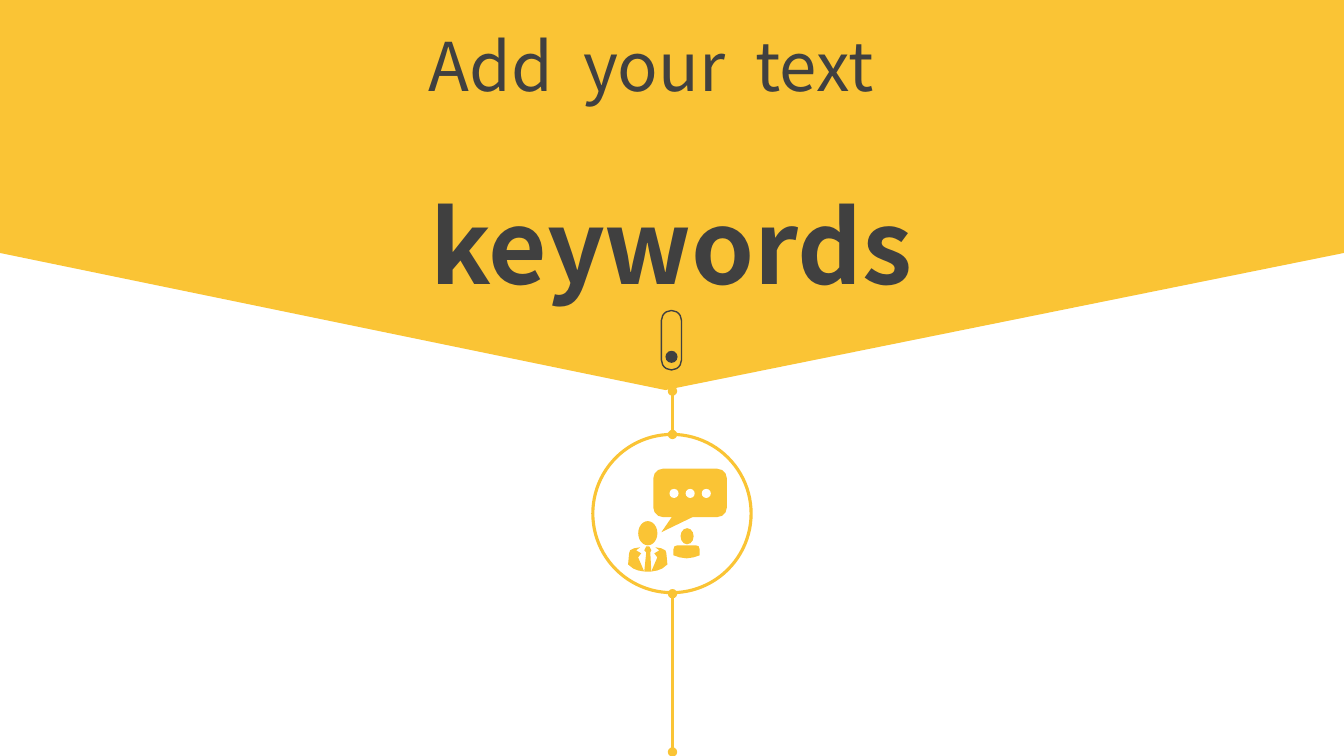
from dataclasses import dataclass

from lxml.etree import SubElement
from pptx import Presentation
from pptx.dml.color import RGBColor
from pptx.enum.shapes import MSO_CONNECTOR, MSO_SHAPE as Shape
from pptx.enum.text import MSO_ANCHOR, MSO_AUTO_SIZE, PP_ALIGN
from pptx.oxml.ns import qn
from pptx.util import Pt

PX = 9144
YELLOW, DARK, WHITE = "FAC435", "404040", "FFFFFF"
FONT = "Noto Sans CJK JP"
AXIS = 667
BODY_AXIS_DOUBLE = 1285


@dataclass
class Preset:
    kind: Shape
    x: int
    y: int
    w: int
    h: int
    fill: str | None = None
    line: str | None = None
    weight: float = 1
    radius: float | None = None


@dataclass
class Outline:
    points: list[tuple[int, int]]
    fill: str = YELLOW


def color(value: str) -> RGBColor:
    return RGBColor.from_string(value)


def paint(sp, fill: str | None, line: str | None = None, weight: float = 1) -> None:
    sp.shadow.inherit = False
    if fill:
        sp.fill.solid()
        sp.fill.fore_color.rgb = color(fill)
    else:
        sp.fill.background()
    if line:
        sp.line.color.rgb = color(line)
        sp.line.width = Pt(weight)
    else:
        sp.line.fill.background()


def draw_preset(s, item: Preset) -> None:
    box = (v * PX for v in (item.x, item.y, item.w, item.h))
    sp = s.shapes.add_shape(item.kind, *box)
    if item.radius is not None:
        sp.adjustments[0] = item.radius
    paint(sp, item.fill, item.line, item.weight)


def draw_outline(s, item: Outline) -> None:
    builder = s.shapes.build_freeform(*item.points[0], scale=PX)
    builder.add_line_segments(item.points[1:], close=True)
    paint(builder.convert_to_shape(), item.fill)


def draw_stem(s, top: int, bottom: int) -> None:
    c = s.shapes.add_connector(
        MSO_CONNECTOR.STRAIGHT, AXIS * PX, top * PX, AXIS * PX, bottom * PX)
    c.line.color.rgb = color(YELLOW)
    c.line.width = Pt(2.25)
    ln = c.line._get_or_add_ln()
    for end in ("a:headEnd", "a:tailEnd"):
        SubElement(ln, qn(end), type="oval")
    SubElement(c._element.spPr, qn("a:effectLst"))


def write(p, text: str, *, size: int, bold: bool = False,
          after: int = 0, margin: int = 0) -> None:
    p.alignment = PP_ALIGN.CENTER
    p.space_after = Pt(after)
    if margin:
        pPr = p._p.get_or_add_pPr()
        pPr.set("marL", str(margin * PX))
        pPr.set("indent", "0")
    r = p.add_run()
    r.text = text
    r.font.name = FONT
    r.font.size = Pt(size)
    r.font.bold = bold
    r.font.color.rgb = color(DARK)


def draw_title(s) -> None:
    tf = s.shapes.add_textbox(376 * PX, 17 * PX, 540 * PX, 293 * PX).text_frame
    tf.word_wrap = False
    tf.auto_size = MSO_AUTO_SIZE.SHAPE_TO_FIT_TEXT
    tf.vertical_anchor = MSO_ANCHOR.MIDDLE
    write(tf.paragraphs[0], "Add  your  text", size=48, after=56)
    write(tf.add_paragraph(), "keywords", size=72, bold=True, margin=40)


BANNER = Outline([(660, 387), (0, 251), (0, 0), (1333, 0), (1333, 251)])
SWITCH = [
    Preset(Shape.OVAL, 660, 348, 12, 12, DARK),
    Preset(Shape.ROUNDED_RECTANGLE, 656, 308, 20, 59, line=DARK, radius=0.5),
]
RING = Preset(Shape.OVAL, 588, 431, 157, 157, line=YELLOW, weight=2.25)

LEFT_JACKET = [(633, 553), (636, 549), (631, 546), (635, 543), (629, 544),
               (625, 546), (624, 549), (623, 560), (628, 564), (633, 566), (639, 567)]
RIGHT_JACKET = [(BODY_AXIS_DOUBLE - x, y) for x, y in LEFT_JACKET]
TIE = [(645, 548), (646, 546), (644, 542), (641, 542),
       (639, 546), (641, 548), (639, 567), (646, 567)]
SMALL_BUST = [(672, 541), (690, 541), (693, 542), (694, 545), (694, 551), (688, 553),
              (681, 554), (674, 553), (668, 551), (668, 545), (669, 542)]
BUBBLE_TAIL = [(667, 512), (656, 528), (687, 513), (687, 512)]

ICON_OUTLINES = [Outline(points) for points in
                 (LEFT_JACKET, RIGHT_JACKET, TIE, SMALL_BUST, BUBBLE_TAIL)]
ICON_PRESETS = [
    Preset(Shape.OVAL, 633, 517, 19, 24, YELLOW),
    Preset(Shape.OVAL, 675, 524, 13, 16, YELLOW),
    Preset(Shape.ROUNDED_RECTANGLE, 648, 465, 73, 48, YELLOW, radius=0.2),
    *(Preset(Shape.OVAL, 664 + 16 * i, 485, 9, 9, WHITE) for i in range(3)),
]


def main() -> None:
    prs = Presentation()
    prs.slide_width, prs.slide_height = 1333 * PX, 750 * PX
    s = prs.slides.add_slide(prs.slide_layouts[6])
    draw_outline(s, BANNER)
    for item in SWITCH:
        draw_preset(s, item)
    draw_stem(s, 589, 746)
    draw_preset(s, RING)
    draw_stem(s, 388, 431)
    draw_title(s)
    for item in ICON_OUTLINES:
        draw_outline(s, item)
    for item in ICON_PRESETS:
        draw_preset(s, item)
    prs.save("out.pptx")


if __name__ == "__main__":
    main()
